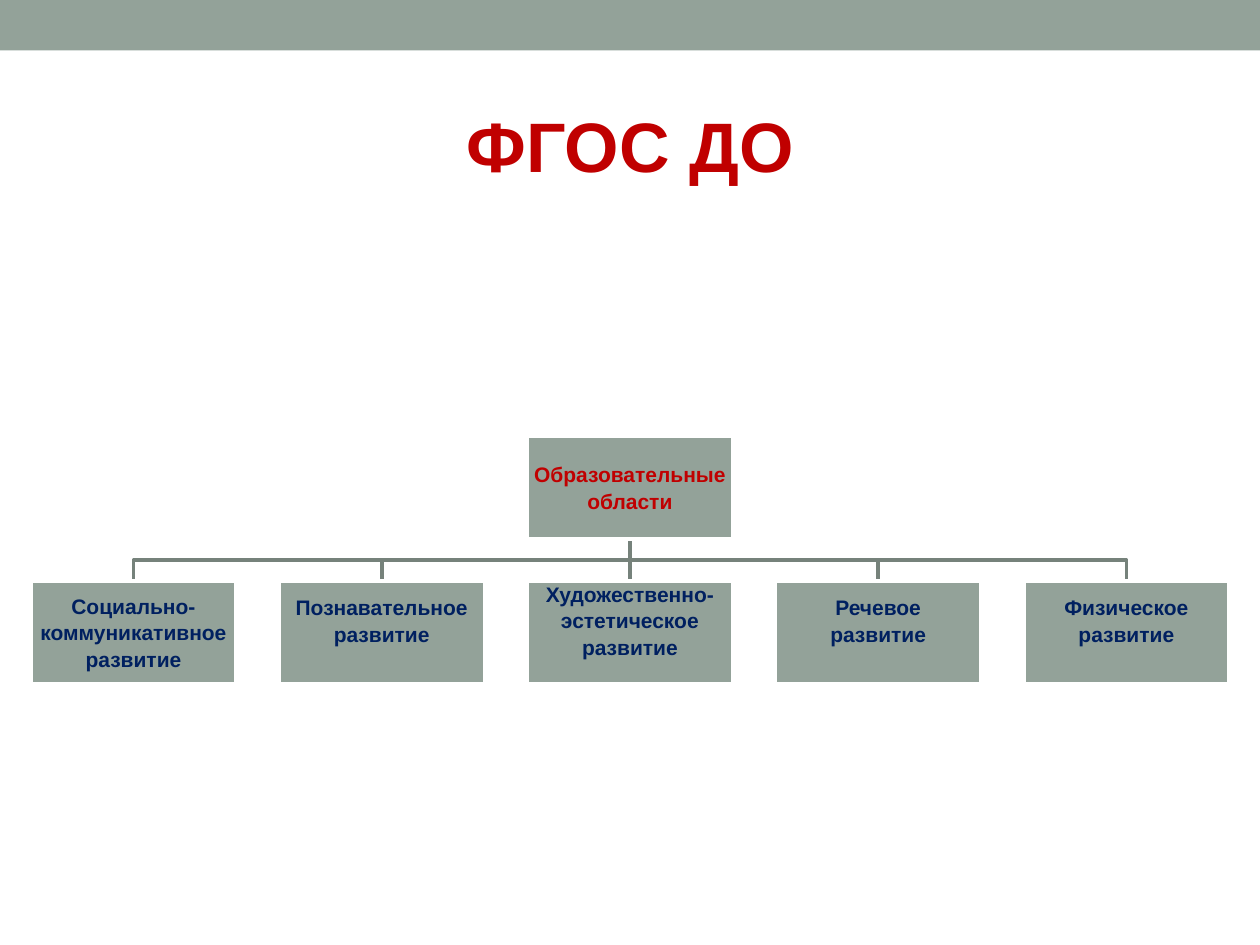
from lxml import etree
from pptx import Presentation
from pptx import util as u
from pptx.dml.color import RGBColor
from pptx.enum import shapes, text
from pptx.oxml.ns import qn

SAGE, GREY, RED, NAVY, WHITE = "93A299", "76827B", "C00000", "002060", "FFFFFF"
BOX_W, BOX_H, STEP, DROP = 1.63, 0.82, 1.97, 1.15
LINE = u.Pt(2.08)
ROOT = ["Образовательные", "области"]
# Each area: its lines and the space kept free below them
AREAS = [
    (["Социально-", "коммуникативное", "развитие"], 0.01),
    (["Познавательное", "развитие"], 0.2),
    (["Художественно-", "эстетическое", "развитие"], 0.2),
    (["Речевое", "развитие"], 0.2),
    (["Физическое", "развитие"], 0.2),
]


def rgb(code):
    return RGBColor.from_string(code)


def write(para, words, size, color):
    para.alignment = text.PP_ALIGN.CENTER
    run = para.add_run()
    run.text = words
    font = run.font
    font.name, font.size, font.bold = "Arial", u.Pt(size), True
    font.color.rgb = rgb(color)


def add_rect(slide, x, y, w, h):
    rect = slide.shapes.add_shape(
        shapes.MSO_SHAPE.RECTANGLE, *map(u.Inches, (x, y, w, h)))
    rect.shadow.inherit = False
    rect.fill.solid()
    rect.fill.fore_color.rgb = rgb(SAGE)
    rect.line.fill.background()
    return rect


def add_title(slide, x, y, w, h):
    title = slide.shapes.title
    title.left, title.top, title.width, title.height = map(u.Inches, (x, y, w, h))
    frame = title.text_frame
    frame.word_wrap = False
    frame.auto_size = text.MSO_AUTO_SIZE.SHAPE_TO_FIT_TEXT
    frame.vertical_anchor = text.MSO_ANCHOR.TOP
    write(frame.paragraphs[0], "ФГОС ДО", 40, RED)


def add_box(slide, x, y, lines, color, below=0.01):
    box = add_rect(slide, x, y, BOX_W, BOX_H)
    box.line.color.rgb = rgb(WHITE)
    box.line.width = LINE
    frame = box.text_frame
    frame.word_wrap = True
    frame.vertical_anchor = text.MSO_ANCHOR.MIDDLE
    frame.margin_left = frame.margin_right = frame.margin_top = u.Inches(0.01)
    frame.margin_bottom = u.Inches(below)
    for i, words in enumerate(lines):
        para = frame.add_paragraph() if i else frame.paragraphs[0]
        para.space_before = u.Pt(0.7 if i else 0)
        write(para, words, 12, color)
    return box


def add_elbow(slide, x, top, end, low):
    mid = (top + low) / 2
    points = [(x, mid), (end, mid), (end, low)]
    path = slide.shapes.build_freeform(u.Inches(x), u.Inches(top))
    path.add_line_segments(
        [(u.Inches(a), u.Inches(b)) for a, b in points], close=False)
    elbow = path.convert_to_shape()
    elbow.shadow.inherit = False
    elbow.fill.background()
    elbow.line.color.rgb = rgb(GREY)
    elbow.line.width = LINE


def add_stem(slide, x, top, low):
    stem = slide.shapes.add_connector(
        shapes.MSO_CONNECTOR.STRAIGHT, *map(u.Inches, (x, top, x, low)))
    stem.line.color.rgb = rgb(GREY)
    stem.line.width = LINE
    etree.SubElement(stem._element.spPr, qn("a:effectLst"))
    return stem


def add_tree(slide, x, y):
    """Draw the root box over its row of areas; x is the centre, y the top."""
    top, low = y + BOX_H, y + DROP
    half = len(AREAS) // 2
    spots = [x + (i - half) * STEP for i in range(len(AREAS))]
    for spot in spots:
        if spot != x:
            add_elbow(slide, x, top, spot, low)
    stem = add_stem(slide, x, top, low)
    root = add_box(slide, x - BOX_W / 2, y, ROOT, RED)
    boxes = [add_box(slide, spot - BOX_W / 2, low, lines, NAVY, below)
             for spot, (lines, below) in zip(spots, AREAS)]
    stem.begin_connect(root, 2)
    stem.end_connect(boxes[half], 0)


def main():
    deck = Presentation()
    deck.slide_width, deck.slide_height = u.Inches(10), u.Inches(7.5)
    slide = deck.slides.add_slide(deck.slide_layouts[5])
    add_rect(slide, 0, 0, 10, 0.4)
    add_title(slide, 3.59, 0.76, 2.82, 0.77)
    add_tree(slide, 5, 3.46)
    deck.save("out.pptx")


if __name__ == "__main__":
    main()
